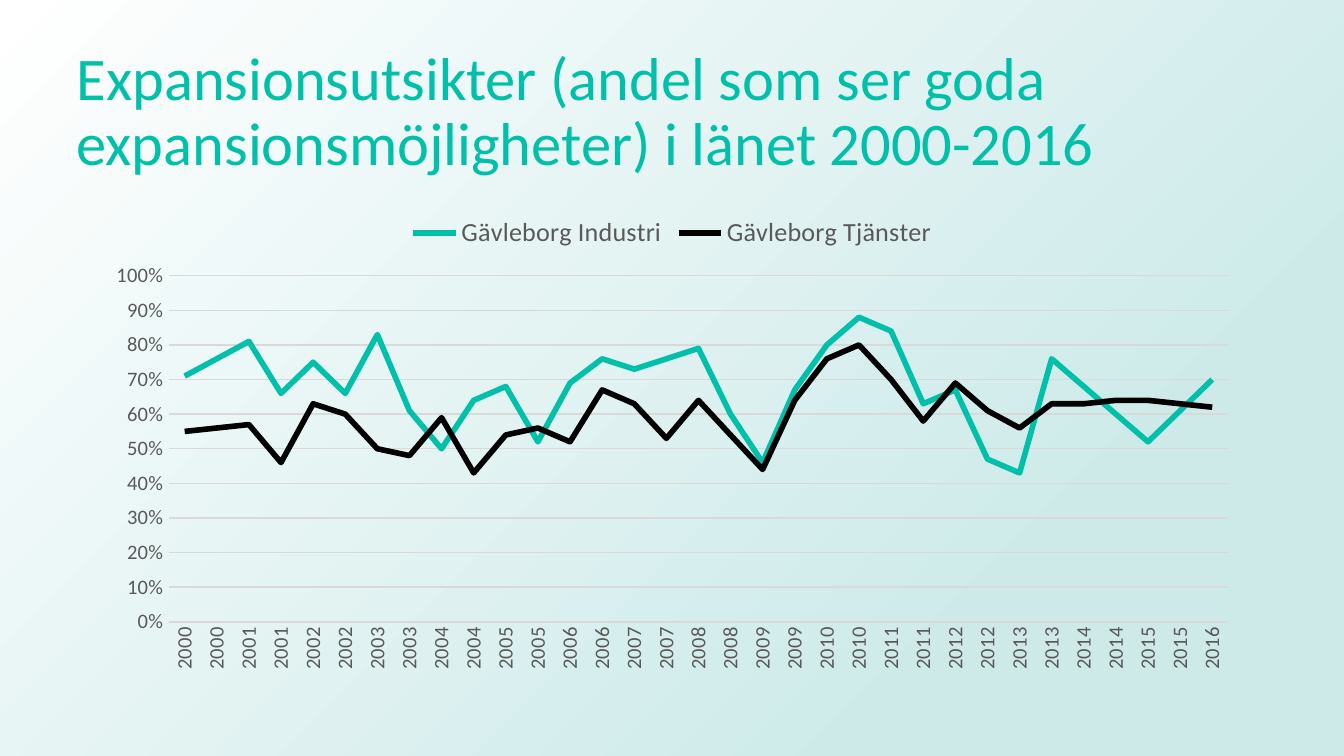
from lxml import etree
from pptx import Presentation
from pptx.chart.data import CategoryChartData
from pptx.dml.color import RGBColor
from pptx.enum.chart import XL_CHART_TYPE, XL_LEGEND_POSITION, XL_TICK_MARK
from pptx.enum.shapes import MSO_SHAPE
from pptx.enum.text import MSO_ANCHOR
from pptx.oxml import parse_xml
from pptx.oxml.ns import nsdecls, qn
from pptx.util import Pt

LINE = XL_CHART_TYPE.LINE
LEGEND_TOP = XL_LEGEND_POSITION.TOP
NO_TICK = XL_TICK_MARK.NONE
RECTANGLE = MSO_SHAPE.RECTANGLE
MIDDLE = MSO_ANCHOR.MIDDLE

WIDTH, HEIGHT = 720, 405
FONT = "Calibri"
TEAL, BLACK, GREY, PALE_GREY = "00C0A9", "000000", "595959", "D9D9D9"
PLOT_AREA = {"x": 0.065, "y": 0.155, "w": 0.915, "h": 0.723}

TITLE = "Expansionsutsikter (andel som ser goda expansionsmöjligheter) i länet 2000-2016"
HALF_YEARS = [str(2000 + index // 2) for index in range(33)]
INDUSTRY = [71, 76, 81, 66, 75, 66, 83, 61, 50, 64, 68, 52, 69, 76, 73, 76, 79,
            60, 46, 67, 80, 88, 84, 63, 67, 47, 43, 76, 68, 60, 52, 61, 70]
SERVICES = [55, 56, 57, 46, 63, 60, 50, 48, 59, 43, 54, 56, 52, 67, 63, 53, 64,
            54, 44, 64, 76, 80, 70, 58, 69, 61, 56, 63, 63, 64, 64, 63, 62]
SERIES = [("Gävleborg Industri", INDUSTRY, TEAL), ("Gävleborg Tjänster", SERVICES, BLACK)]


def color(value):
    """Turn a hex string into a colour."""
    return RGBColor.from_string(value)


def format_font(font, size, value):
    """Set the typeface, size and colour of a font."""
    font.name = FONT
    font.size = Pt(size)
    font.color.rgb = color(value)


def format_line(line, width, value):
    """Set the width and colour of a line."""
    line.width = Pt(width)
    line.color.rgb = color(value)


def add_background(slide, inner, outer):
    """Fill the slide with a radial gradient centred on its lower right corner."""
    shape = slide.shapes.add_shape(RECTANGLE, 0, 0, Pt(WIDTH), Pt(HEIGHT))
    shape.shadow.inherit = False
    shape.line.fill.background()
    shape.fill.gradient()
    for stop, position, value in zip(shape.fill.gradient_stops, (0.23, 1), (inner, outer)):
        stop.position = position
        stop.color.rgb = color(value)
    gradient = shape.fill._xPr.find(qn("a:gradFill"))
    gradient.replace(gradient.find(qn("a:lin")), parse_xml(
        f'<a:path {nsdecls("a")} path="circle"><a:fillToRect l="100000" t="100000"/></a:path>'))


def add_text(slide, text, *, left, top, width, height, size, value, spacing=1.0):
    """Add a wrapped, vertically centred text box."""
    shape = slide.shapes.add_textbox(Pt(left), Pt(top), Pt(width), Pt(height))
    frame = shape.text_frame
    frame.word_wrap = True
    frame.vertical_anchor = MIDDLE
    paragraph = frame.paragraphs[0]
    paragraph.line_spacing = spacing
    run = paragraph.add_run()
    run.text = text
    format_font(run.font, size, value)


def format_axes(chart):
    """Style the upright year labels, the percentage scale and its gridlines."""
    years, shares = chart.category_axis, chart.value_axis
    for axis in (years, shares):
        axis.major_tick_mark = axis.minor_tick_mark = NO_TICK
        format_font(axis.tick_labels.font, 11, GREY)
    format_line(years.format.line, 0.75, PALE_GREY)
    years._element.find(qn("c:txPr")).find(qn("a:bodyPr")).set("rot", "-5400000")
    shares.minimum_scale, shares.maximum_scale, shares.major_unit = 0, 1, 0.1
    shares.tick_labels.number_format = "0%"
    shares.tick_labels.number_format_is_linked = False
    shares.format.line.fill.background()
    format_line(shares.major_gridlines.format.line, 0.75, PALE_GREY)


def place_plot(chart):
    """Fix the inner plot area as fractions of the chart."""
    plot_area = chart._chartSpace.find(".//" + qn("c:plotArea"))
    for layout in plot_area.findall(qn("c:layout")):
        plot_area.remove(layout)
    layout = etree.Element(qn("c:layout"))
    manual = etree.SubElement(layout, qn("c:manualLayout"))
    settings = {"layoutTarget": "inner", "xMode": "edge", "yMode": "edge", **PLOT_AREA}
    for name, setting in settings.items():
        etree.SubElement(manual, qn(f"c:{name}")).set("val", str(setting))
    plot_area.insert(0, layout)


def add_line_chart(slide, left, top, width, height):
    """Add the line chart with a legend above the plot."""
    data = CategoryChartData(number_format="0%")
    data.categories = HALF_YEARS
    for name, percentages, _ in SERIES:
        data.add_series(name, [percentage / 100 for percentage in percentages])
    chart = slide.shapes.add_chart(
        LINE, Pt(left), Pt(top), Pt(width), Pt(height), data).chart
    format_font(chart.font, 10, BLACK)
    chart.has_title = False
    chart.has_legend = True
    chart.legend.position = LEGEND_TOP
    chart.legend.include_in_layout = False
    format_font(chart.legend.font, 14, GREY)
    chart.plots[0].vary_by_categories = False
    for series, (_, _, value) in zip(chart.plots[0].series, SERIES):
        series.smooth = False
        format_line(series.format.line, 3, value)
    format_axes(chart)
    place_plot(chart)


def main():
    """Build and save the slide."""
    presentation = Presentation()
    presentation.slide_width, presentation.slide_height = Pt(WIDTH), Pt(HEIGHT)
    slide = presentation.slides.add_slide(presentation.slide_layouts[6])
    add_background(slide, "CDEAE9", "FFFFFF")
    add_text(slide, TITLE, left=34, top=21.5, width=637, height=78.5,
             size=32.4, value=TEAL, spacing=0.9)
    add_line_chart(slide, 50, 108, 620.5, 256.5)
    presentation.save("out.pptx")


if __name__ == "__main__":
    main()
